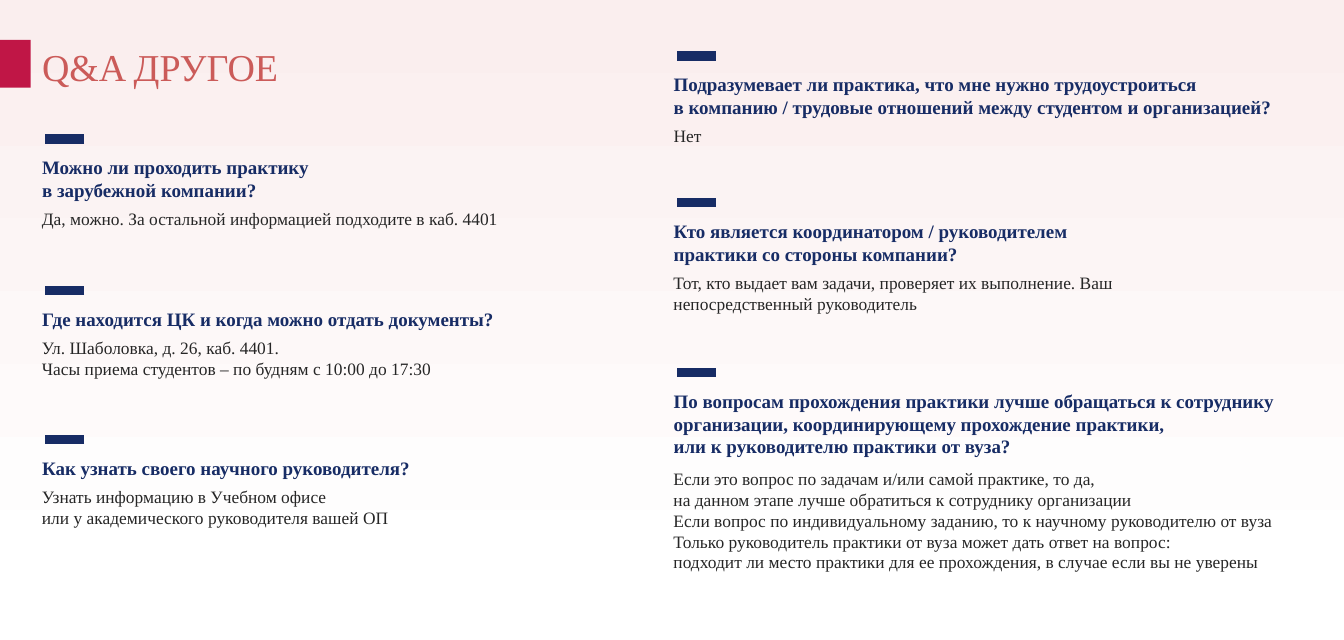
from pptx import Presentation
from pptx.dml.color import RGBColor
from pptx.enum import shapes
from pptx.oxml.ns import qn
from pptx.util import Inches, Pt
from lxml import etree

COLORS = {
    "title": "CB5B59",
    "marker": "C01646",
    "question": "172C65",
    "answer": "262626",
    "bottom": "FFFFFF",
    "top": "FAEEEE",
}
FONT = "Times New Roman"
LEFT, RIGHT = 0.36, 5.91
# Distance from the bar to the answer, by number of lines in the question
ANSWER_DROP = {1: 0.36, 2: 0.56, 3: 0.79}

# Column, bar height, question lines, question width, answer width, question, answer
ENTRIES = [
    (LEFT, 1.22, 2, 2.98, 4.62,
     ["Можно ли проходить практику", "в зарубежной компании?"],
     ["Да, можно. За остальной информацией подходите в каб. 4401"]),
    (LEFT, 2.55, 1, 4.38, 4.14,
     ["Где находится ЦК и когда можно отдать документы?"],
     ["Ул. Шаболовка, д. 26, каб. 4401.",
      "Часы приема студентов – по будням с 10:00 до 17:30"]),
    (LEFT, 3.86, 1, 4.38, 4.29,
     ["Как узнать своего научного руководителя?"],
     ["Узнать информацию в Учебном офисе",
      "или у академического руководителя вашей ОП"]),
    (RIGHT, 0.49, 2, 5.54, 4.25,
     ["Подразумевает ли практика, что мне нужно трудоустроиться",
      "в компанию / трудовые отношений между студентом и организацией?"],
     ["Нет"]),
    (RIGHT, 1.78, 2, 4.04, 4.14,
     ["Кто является координатором / руководителем практики со стороны компании?"],
     ["Тот, кто выдает вам задачи, проверяет их выполнение. "
      "Ваш непосредственный руководитель"]),
    (RIGHT, 3.27, 3, 5.45, 5.84,
     ["По вопросам прохождения практики лучше обращаться к сотруднику "
      "организации, координирующему прохождение практики,",
      "или к руководителю практики от вуза?"],
     ["Если это вопрос по задачам и/или самой практике, то да,",
      "на данном этапе лучше обратиться к сотруднику организации",
      "Если вопрос по индивидуальному заданию, то к научному руководителю от вуза",
      "Только руководитель практики от вуза может дать ответ на вопрос:",
      "подходит ли место практики для ее прохождения, в случае если вы не уверены"]),
]


def rgb(name):
    return RGBColor.from_string(COLORS[name])


def paint_background(slide):
    fill = slide.background.fill
    fill.gradient()
    fill.gradient_angle = 90
    for stop, name, position in zip(fill.gradient_stops, ("bottom", "top"), (0.09, 1)):
        stop.color.rgb = rgb(name)
        stop.position = position


def add_text(slide, box, lines, size, color, bold=False, inset=0.0):
    """Add one paragraph per line; inset is the side margin in inches."""
    frame = slide.shapes.add_textbox(*map(Inches, box)).text_frame
    frame.word_wrap = True
    frame.margin_left = frame.margin_right = Inches(inset)
    frame.margin_top = Inches(inset / 2 or 0.01)
    frame.margin_bottom = Inches(inset / 2)
    frame.text = "\n".join(lines)
    for paragraph in frame.paragraphs:
        font = paragraph.font
        font.name, font.size, font.bold = FONT, Pt(size), bold
        font.color.rgb = rgb(color)
        paragraph._p.get_or_add_pPr().set("marL", str(Inches(0.01)))


def add_marker(slide):
    marker = slide.shapes.add_shape(
        shapes.MSO_SHAPE.RECTANGLE, 0, Inches(0.35), Inches(0.27), Inches(0.42))
    marker.shadow.inherit = False
    marker.fill.solid()
    marker.fill.fore_color.rgb = rgb("marker")
    marker.line.fill.background()


def add_bar(slide, left, y):
    bar = slide.shapes.add_connector(
        shapes.MSO_CONNECTOR.STRAIGHT,
        Inches(left + 0.34), Inches(y), Inches(left), Inches(y))
    bar.line.color.rgb = rgb("question")
    bar.line.width = Pt(6)
    etree.SubElement(bar._element.spPr, qn("a:effectLst"))


def add_entry(slide, column, y, question_lines, question_width, answer_width,
              question, answer):
    add_bar(slide, column + 0.04, y)
    add_text(slide, (column, y + 0.14, question_width, 0.37),
             question, 12, "question", bold=True)
    add_text(slide, (column - 0.1, y + ANSWER_DROP[question_lines],
                     answer_width, 0.1 + 0.19 * len(answer)),
             answer, 11, "answer", inset=0.1)


def main():
    deck = Presentation()
    deck.slide_width, deck.slide_height = Inches(11.81), Inches(5.62)
    slide = deck.slides.add_slide(deck.slide_layouts[6])
    paint_background(slide)
    add_text(slide, (LEFT, 0.37, 4.52, 0.82), ["Q&A ДРУГОЕ"], 24, "title")
    add_marker(slide)
    for entry in ENTRIES:
        add_entry(slide, *entry)
    deck.save("out.pptx")


if __name__ == "__main__":
    main()
